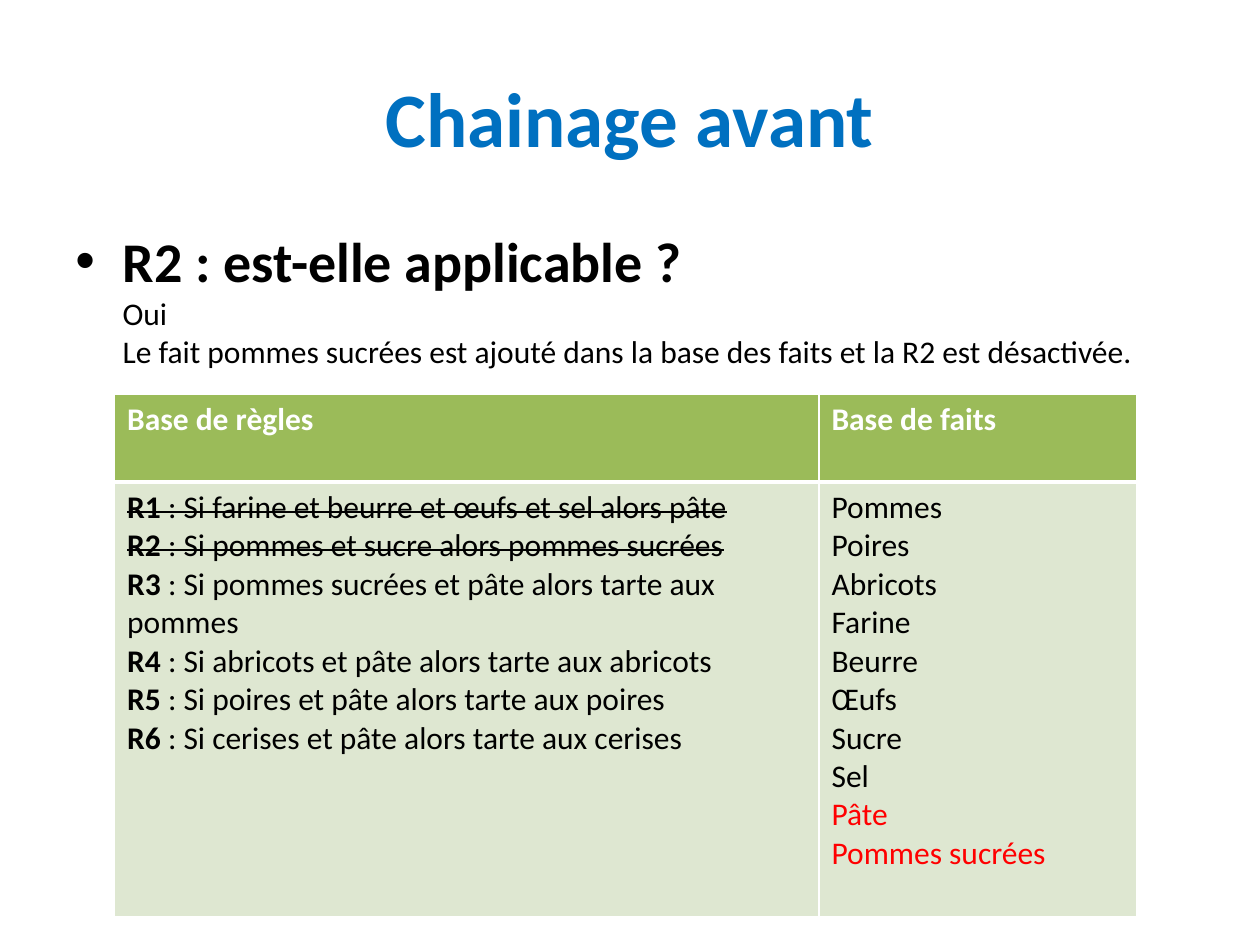
from dataclasses import dataclass

from lxml.etree import SubElement
from pptx import Presentation
from pptx.dml.color import RGBColor as RGB
from pptx.enum.text import MSO_ANCHOR as Anchor, PP_ALIGN as Align
from pptx.oxml.ns import qn
from pptx.util import Pt


@dataclass(frozen=True)
class Theme:
    font: str = "Calibri"
    title_size: int = 44
    question_size: int = 32
    text_size: int = 18
    title: str = "0070C0"
    text: str = "000000"
    new_fact: str = "FF0000"
    header: str = "9BBB59"
    band: str = "DEE7D1"
    white: str = "FFFFFF"


@dataclass(frozen=True)
class Box:
    left: float
    top: float
    width: float
    height: float

    def lengths(self) -> tuple:
        return tuple(Pt(v) for v in (self.left, self.top, self.width, self.height))


@dataclass(frozen=True)
class Rule:
    name: str
    text: str
    fired: bool = False


@dataclass(frozen=True)
class Fact:
    name: str
    new: bool = False


THEME = Theme()
TITLE_BOX = Box(36, 21.6, 648, 90)
BODY_BOX = Box(36, 126, 648, 356.4)
TABLE_BOX = Box(65.5, 225, 584, 299)
COLUMNS = (402.5, 181.5)
ROWS = (50.5, 248.5)
BULLET_INDENT = 27

HEADERS = ("Base de règles", "Base de faits")
RULES = (
    Rule("R1", "Si farine et beurre et œufs et sel alors pâte", True),
    Rule("R2", "Si pommes et sucre alors pommes sucrées", True),
    Rule("R3", "Si pommes sucrées et pâte alors tarte aux pommes"),
    Rule("R4", "Si abricots et pâte alors tarte aux abricots"),
    Rule("R5", "Si poires et pâte alors tarte aux poires"),
    Rule("R6", "Si cerises et pâte alors tarte aux cerises"),
)
FACTS = tuple(Fact(n) for n in ("Pommes", "Poires", "Abricots", "Farine",
                                "Beurre", "Œufs", "Sucre", "Sel"))
FACTS += (Fact("Pâte", True), Fact("Pommes sucrées", True))


def add_run(p, text: str, size: int = THEME.text_size, color: str = THEME.text,
            bold: bool = False, strike: bool = False) -> None:
    r = p.add_run()
    r.text = text
    for name, value in {"name": THEME.font, "size": Pt(size), "bold": bold}.items():
        setattr(r.font, name, value)
    r.font.color.rgb = RGB.from_string(color)
    if strike:
        r._r.get_or_add_rPr().set("strike", "sngStrike")


def add_text_box(s, box: Box, anchor: Anchor):
    tf = s.shapes.add_textbox(*box.lengths()).text_frame
    tf.word_wrap = True
    tf.vertical_anchor = anchor
    return tf


def add_bullet(p, indent: float) -> None:
    """Give the paragraph a hanging bullet."""
    pPr = p._p.get_or_add_pPr()
    pPr.set("marL", str(Pt(indent)))
    pPr.set("indent", str(-Pt(indent)))
    SubElement(pPr, qn("a:buFont"), typeface="Arial")
    SubElement(pPr, qn("a:buChar"), char="•")


def style_cell(cell, fill: str, bottom: float) -> None:
    """Draw white borders, the bottom one at its own width, then the fill."""
    tcPr = cell._tc.get_or_add_tcPr()
    for tag, width in {"lnL": 1, "lnR": 1, "lnT": 1, "lnB": bottom}.items():
        ln = SubElement(tcPr, qn(f"a:{tag}"), w=str(Pt(width)))
        SubElement(SubElement(ln, qn("a:solidFill")), qn("a:srgbClr"), val=THEME.white)
    cell.fill.solid()
    cell.fill.fore_color.rgb = RGB.from_string(fill)


def paragraphs(tf, count: int) -> list:
    return [tf.paragraphs[0]] + [tf.add_paragraph() for _ in range(count - 1)]


def add_title(s) -> None:
    p = add_text_box(s, TITLE_BOX, Anchor.MIDDLE).paragraphs[0]
    p.alignment = Align.CENTER
    add_run(p, "Chainage avant", THEME.title_size, THEME.title, bold=True)


def add_question(s) -> None:
    p = add_text_box(s, BODY_BOX, Anchor.TOP).paragraphs[0]
    add_bullet(p, BULLET_INDENT)
    add_run(p, "R2 : est-elle applicable ?", THEME.question_size, bold=True)
    for line in ("Oui", "Le fait pommes sucrées est ajouté dans la base des faits "
                        "et la R2 est désactivée."):
        p.add_line_break()
        add_run(p, line)


def add_knowledge_table(s) -> None:
    table = s.shapes.add_table(len(ROWS), len(COLUMNS), *TABLE_BOX.lengths()).table
    for column, width in zip(table.columns, COLUMNS):
        column.width = Pt(width)
    for row, height in zip(table.rows, ROWS):
        row.height = Pt(height)
    for i, header in enumerate(HEADERS):
        style_cell(table.cell(0, i), THEME.header, bottom=3)
        style_cell(table.cell(1, i), THEME.band, bottom=1)
        add_run(table.cell(0, i).text_frame.paragraphs[0], header,
                color=THEME.white, bold=True)
    for p, rule in zip(paragraphs(table.cell(1, 0).text_frame, len(RULES)), RULES):
        add_run(p, rule.name, bold=True, strike=rule.fired)
        add_run(p, f" : {rule.text}", strike=rule.fired)
    for p, fact in zip(paragraphs(table.cell(1, 1).text_frame, len(FACTS)), FACTS):
        add_run(p, fact.name, color=THEME.new_fact if fact.new else THEME.text)


def main() -> None:
    prs = Presentation()
    prs.slide_width, prs.slide_height = Pt(720), Pt(540)
    s = prs.slides.add_slide(prs.slide_layouts[6])
    add_question(s)
    add_knowledge_table(s)
    add_title(s)
    prs.save("out.pptx")


if __name__ == "__main__":
    main()
